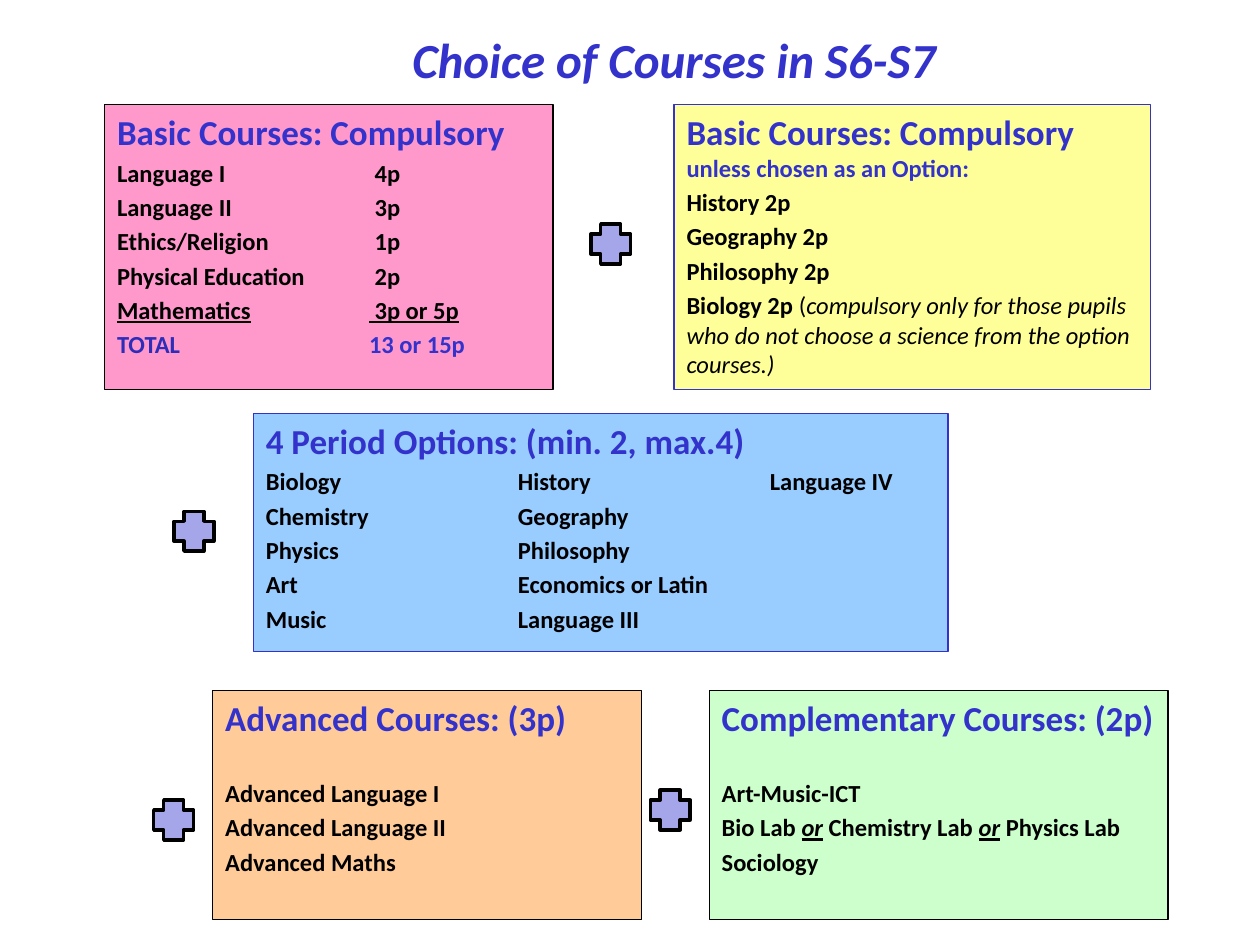
from dataclasses import dataclass

from lxml import etree
from pptx import Presentation
from pptx.dml.color import RGBColor
from pptx.enum.shapes import MSO_SHAPE
from pptx.enum.text import MSO_ANCHOR, MSO_AUTO_SIZE, PP_ALIGN
from pptx.oxml.ns import qn
from pptx.util import Cm, Pt

RECTANGLE, PLUS = MSO_SHAPE.RECTANGLE, MSO_SHAPE.CROSS
TOP, MIDDLE = MSO_ANCHOR.TOP, MSO_ANCHOR.MIDDLE
CENTER, LEFT = PP_ALIGN.CENTER, PP_ALIGN.LEFT
NO_AUTOFIT = MSO_AUTO_SIZE.NONE

COLORS = {
    "heading": "3333CC", "total": "2D2DB9", "text": "000000", "plus": "A5A5E9",
    "pink": "FF99CC", "yellow": "FFFF99", "blue": "99CCFF",
    "orange": "FFCC99", "green": "CCFFCC",
}
FONT = "Calibri"
HEADING_SIZE, BODY_SIZE = 20, 14
LINE_GAP, SECTION_GAP = 2.8, 22.4
TAB_STEP = Cm(5.08)
PLUS_SIZE = 0.8


@dataclass
class Run:
    text: str
    color: str = "text"
    bold: bool = True
    italic: bool = False
    underline: bool = False
    size: float = BODY_SIZE


@dataclass
class CourseBox:
    left: float
    top: float
    width: float
    height: float
    fill: str
    outline: str
    heading: str
    courses: list[list[Run]]
    heading_note: str = ""
    first_gap: float = LINE_GAP
    tab_count: int = 0


def rgb(name: str) -> RGBColor:
    return RGBColor.from_string(COLORS[name])


def add_text(paragraph, text: str, *, color: str = "text", size: float = BODY_SIZE,
             bold: bool = True, italic: bool = False, underline: bool = False) -> None:
    run = paragraph.add_run()
    run.text = text
    font = run.font
    font.name, font.size = FONT, Pt(size)
    font.bold, font.italic, font.underline = bold, italic, underline
    font.color.rgb = rgb(color)


def add_outlined(slide, kind, left: float, top: float, width: float, height: float,
                 fill: str, outline: str, line_width: float):
    shape = slide.shapes.add_shape(kind, Cm(left), Cm(top), Cm(width), Cm(height))
    shape.shadow.inherit = False
    shape.fill.solid()
    shape.fill.fore_color.rgb = rgb(fill)
    shape.line.color.rgb = rgb(outline)
    shape.line.width = Pt(line_width)
    return shape


def add_tabs(paragraph, count: int) -> None:
    tabs = etree.SubElement(paragraph._p.get_or_add_pPr(), qn("a:tabLst"))
    for number in range(1, count + 1):
        etree.SubElement(tabs, qn("a:tab"), pos=str(TAB_STEP * number), algn="l")


def add_course_box(slide, box: CourseBox) -> None:
    shape = add_outlined(slide, RECTANGLE, box.left, box.top, box.width, box.height,
                         box.fill, box.outline, 0.75)
    frame = shape.text_frame
    frame.word_wrap = True
    frame.vertical_anchor = TOP
    heading = frame.paragraphs[0]
    heading.alignment = LEFT
    add_text(heading, box.heading, color="heading", size=HEADING_SIZE)
    if box.heading_note:
        add_text(heading, box.heading_note, color="heading")
    for index, runs in enumerate(box.courses):
        course = frame.add_paragraph()
        if box.tab_count:
            add_tabs(course, box.tab_count)
        course.alignment = LEFT
        course.space_before = Pt(LINE_GAP if index else box.first_gap)
        for run in runs:
            add_text(course, run.text, color=run.color, size=run.size, bold=run.bold,
                     italic=run.italic, underline=run.underline)


def add_title(slide, text: str) -> None:
    title = slide.shapes.title
    title.left, title.top, title.width, title.height = Cm(2.79), Cm(0.28), Cm(21.59), Cm(1.83)
    frame = title.text_frame
    frame.auto_size = NO_AUTOFIT
    frame.word_wrap = True
    frame.vertical_anchor = MIDDLE
    frame.paragraphs[0].alignment = CENTER
    add_text(frame.paragraphs[0], text, color="heading", size=28, italic=True)


def plain(*lines: str) -> list[list[Run]]:
    return [[Run(line)] for line in lines]


OR = Run("or", italic=True, underline=True)

BOXES = [
    CourseBox(
        2.11, 2.11, 9.04, 5.74, "pink", "text", "Basic Courses: Compulsory",
        plain("Language I\t 4p", "Language II\t 3p", "Ethics/Religion\t 1p",
              "Physical Education\t 2p")
        + [[Run("Mathematics\t 3p or 5p", underline=True)],
           [Run("TOTAL\t", "total"), Run("13 or 15p", "heading")]],
        tab_count=1),
    CourseBox(
        13.59, 2.11, 9.6, 5.74, "yellow", "heading", "Basic Courses: Compulsory",
        plain("History 2p", "Geography 2p", "Philosophy 2p")
        + [[Run("Biology 2p "), Run("(", bold=False),
            Run("compulsory only for those pupils who do not choose a science "
                "from the option courses.)", bold=False, italic=True)]],
        heading_note=" unless chosen as an Option:"),
    CourseBox(
        4.29, 13.92, 8.64, 4.62, "orange", "text", "Advanced Courses: (3p)",
        plain("Advanced Language I", "Advanced Language II", "Advanced Maths"),
        first_gap=SECTION_GAP),
    CourseBox(
        14.3, 13.92, 9.25, 4.62, "green", "text", "Complementary Courses: (2p)",
        [[Run("Art-Music-ICT")],
         [Run("Bio Lab "), OR, Run(" Chemistry Lab "), OR, Run(" Physics Lab")],
         [Run("Sociology")]],
        first_gap=SECTION_GAP),
    CourseBox(
        5.11, 8.33, 14, 4.8, "blue", "heading", "4 Period Options: (min. 2, max.4)",
        plain("Biology\tHistory\tLanguage IV", "Chemistry\tGeography",
              "Physics\tPhilosophy", "Art\tEconomics or Latin", "Music\tLanguage III"),
        tab_count=2),
]
PLUS_POSITIONS = [(11.91, 4.52), (3.51, 10.31), (3.1, 16.13), (13.11, 15.93)]


def main() -> None:
    presentation = Presentation()
    presentation.slide_width, presentation.slide_height = Cm(25.4), Cm(19.05)
    slide = presentation.slides.add_slide(presentation.slide_layouts[5])
    add_title(slide, "Choice of Courses in S6-S7")
    for box in BOXES:
        add_course_box(slide, box)
    for left, top in PLUS_POSITIONS:
        add_outlined(slide, PLUS, left, top, PLUS_SIZE, PLUS_SIZE, "plus", "text", 2)
    presentation.save("out.pptx")


if __name__ == "__main__":
    main()
